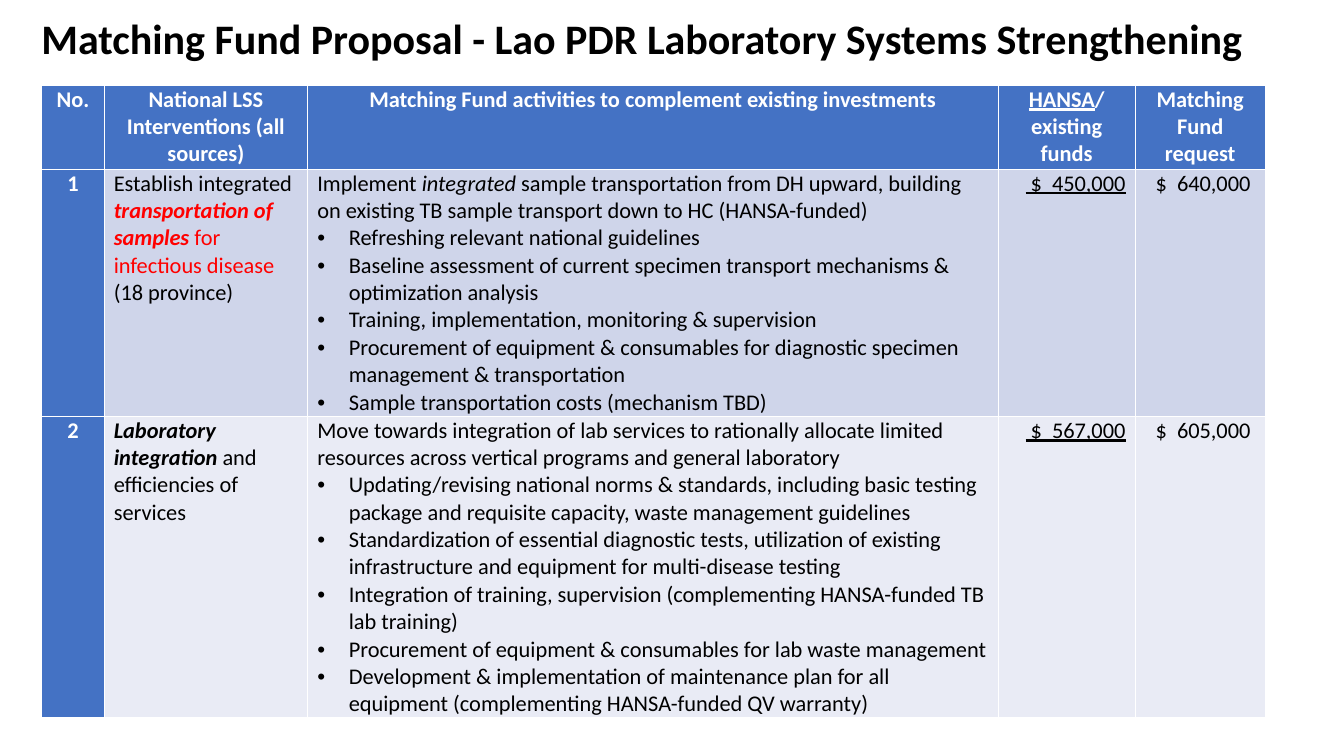
import pptx
import pptx.util
import pptx.dml.color
import pptx.enum.text
import lxml.etree

Pt = pptx.util.Pt
ALIGN = pptx.enum.text.PP_ALIGN

COLORS = {"head": "4472C4", "odd": "CFD5EA", "even": "E9EBF5",
          "white": "FFFFFF", "black": "000000", "red": "FF0000"}
FONT = "Calibri"
TITLE = "Matching Fund Proposal - Lao PDR Laboratory Systems Strengthening"

# A cell is a list of paragraphs, a paragraph a list of (text, marks) runs.
# Marks: b bold, i italic, u underlined, r red.
HEAD = [
    [[("No.", "b")]],
    [[("National LSS Interventions (all sources)", "b")]],
    [[("Matching Fund activities to complement existing investments", "b")]],
    [[("HANSA", "bu"), ("/ existing funds", "b")]],
    [[("Matching Fund request", "b")]],
]
FIRST = [
    [[("1", "b")]],
    [[("Establish integrated ", ""), ("transportation of samples ", "bir"),
      ("for infectious disease ", "r"), ("(18 province)", "")]],
    [[("Implement ", ""), ("integrated", "i"),
      (" sample transportation from DH upward, building on existing TB sample "
       "transport down to HC (HANSA-funded)", "")],
     [("Refreshing relevant national guidelines", "")],
     [("Baseline assessment of current specimen transport mechanisms & "
       "optimization analysis", "")],
     [("Training, implementation, monitoring & supervision", "")],
     [("Procurement of equipment & consumables for diagnostic specimen "
       "management & transportation", "")],
     [("Sample transportation costs (mechanism TBD)", "")]],
    [[(" $  450,000", "u")]],
    [[(" $  640,000 ", "")]],
]
SECOND = [
    [[("2", "b")]],
    [[("Laboratory integration", "bi"), (" and efficiencies of services", "")]],
    [[("Move towards integration of lab services to rationally allocate limited "
       "resources across vertical programs and general laboratory", "")],
     [("Updating/revising national norms & standards, including basic testing "
       "package and requisite capacity, waste management guidelines", "")],
     [("Standardization of essential diagnostic tests, utilization of existing "
       "infrastructure and equipment for multi-disease testing", "")],
     [("Integration of training, supervision (complementing HANSA-funded TB "
       "lab training)", "")],
     [("Procurement of equipment & consumables for lab waste management", "")],
     [("Development & implementation of maintenance plan for all equipment "
       "(complementing HANSA-funded QV warranty)", "")]],
    [[(" $  567,000", "u")]],
    [[(" $  605,000 ", "")]],
]
ROWS = [HEAD, FIRST, SECOND]
WIDTHS = [44.6, 145.4, 493.2, 97.9, 92.9]
HEIGHTS = [60, 176.5, 215]
ALIGNS = [ALIGN.CENTER, ALIGN.LEFT, ALIGN.LEFT, ALIGN.RIGHT, ALIGN.RIGHT]
LEFT, TOP, INDENT = 29.8, 61.2, 22.5


def paint(color, name):
    color.rgb = pptx.dml.color.RGBColor.from_string(COLORS[name])


def style(run, size, marks, color):
    font = run.font
    font.name, font.size = FONT, Pt(size)
    font.bold, font.italic, font.underline = (m in marks for m in "biu")
    paint(font.color, "red" if "r" in marks else color)


def bullet(para):
    props = para._p.get_or_add_pPr()
    props.set("marL", str(Pt(INDENT)))
    props.set("indent", str(-Pt(INDENT)))
    tag = pptx.oxml.ns.qn
    lxml.etree.SubElement(props, tag("a:buFont")).set("typeface", "Arial")
    lxml.etree.SubElement(props, tag("a:buChar")).set("char", "•")


def add_title(slide):
    title = slide.shapes.title
    title.left, title.top = Pt(22.3), Pt(0)
    title.width, title.height = Pt(880), Pt(58)
    frame = title.text_frame
    frame.text = TITLE
    frame.word_wrap = True
    frame.auto_size = pptx.enum.text.MSO_AUTO_SIZE.NONE
    frame.vertical_anchor = pptx.enum.text.MSO_ANCHOR.MIDDLE
    para = frame.paragraphs[0]
    para.alignment, para.line_spacing = ALIGN.LEFT, 0.9
    style(para.runs[0], 30, "b", "black")


def fill_cell(cell, paras, align, back, color):
    cell.fill.solid()
    paint(cell.fill.fore_color, back)
    cell.margin_left = cell.margin_right = Pt(6.9)
    cell.margin_top = cell.margin_bottom = Pt(0)
    frame = cell.text_frame
    for n, runs in enumerate(paras):
        para = frame.add_paragraph() if n else frame.paragraphs[0]
        para.alignment = align
        if n:
            bullet(para)
        for text, marks in runs:
            run = para.add_run()
            run.text = text
            style(run, 16, marks, color)


def add_grid(slide):
    grid = slide.shapes.add_table(len(ROWS), len(WIDTHS), Pt(LEFT), Pt(TOP),
                                  Pt(sum(WIDTHS)), Pt(sum(HEIGHTS))).table
    grid.first_col = True
    for col, width in zip(grid.columns, WIDTHS):
        col.width = Pt(width)
    for r, cells in enumerate(ROWS):
        grid.rows[r].height = Pt(HEIGHTS[r])
        for c, paras in enumerate(cells):
            head = r == 0 or c == 0
            back = "head" if head else ("odd" if r % 2 else "even")
            fill_cell(grid.cell(r, c), paras,
                      ALIGN.CENTER if head else ALIGNS[c],
                      back, "white" if head else "black")


def main():
    deck = pptx.Presentation()
    deck.slide_width, deck.slide_height = Pt(960), Pt(540)
    slide = deck.slides.add_slide(deck.slide_layouts[5])
    add_title(slide)
    add_grid(slide)
    deck.save("out.pptx")


if __name__ == "__main__":
    main()
